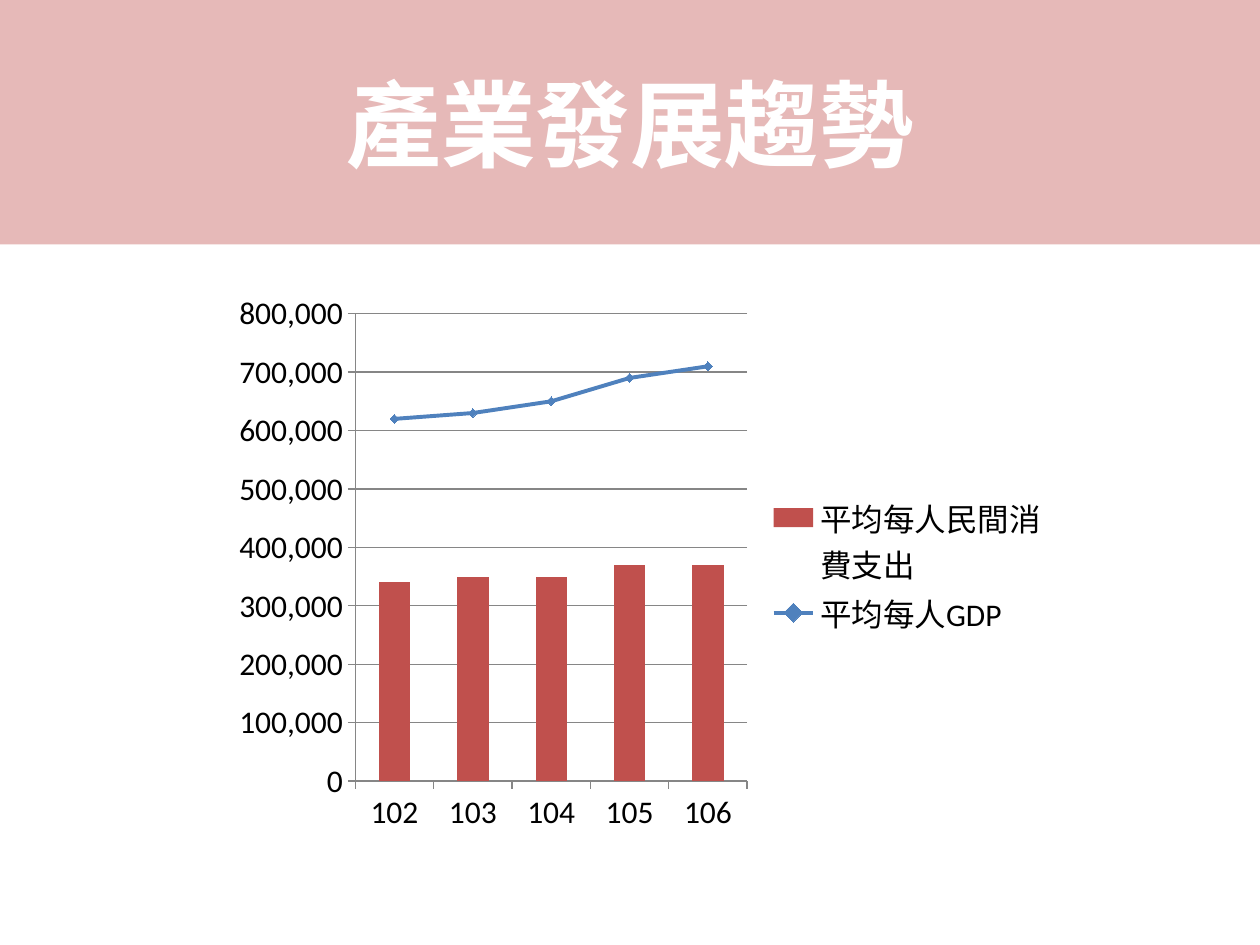
from dataclasses import dataclass

from lxml import etree
from pptx import Presentation
from pptx.chart.data import CategoryChartData
from pptx.dml.color import RGBColor
from pptx.enum.chart import (XL_CHART_TYPE, XL_LEGEND_POSITION, XL_MARKER_STYLE,
                             XL_TICK_MARK)
from pptx.enum.text import MSO_ANCHOR, PP_ALIGN
from pptx.oxml import parse_xml
from pptx.oxml.ns import nsdecls, qn
from pptx.util import Inches, Pt

COLUMN = XL_CHART_TYPE.COLUMN_CLUSTERED
RIGHT = XL_LEGEND_POSITION.RIGHT
DIAMOND = XL_MARKER_STYLE.DIAMOND
OUT, NONE = XL_TICK_MARK.OUTSIDE, XL_TICK_MARK.NONE
MIDDLE, CENTER = MSO_ANCHOR.MIDDLE, PP_ALIGN.CENTER


@dataclass(frozen=True)
class Theme:
    band: RGBColor = RGBColor.from_string("E6B9B8")
    white: RGBColor = RGBColor.from_string("FFFFFF")
    black: RGBColor = RGBColor.from_string("000000")
    grid: RGBColor = RGBColor.from_string("868686")
    bar: RGBColor = RGBColor.from_string("C0504D")
    line: RGBColor = RGBColor.from_string("4F81BD")
    head: str = "Noto Sans CJK SC"
    body: str = "Calibri"
    big: Pt = Pt(54)
    small: Pt = Pt(18)


THEME = Theme()

YEARS = ["102", "103", "104", "105", "106"]
SPEND = [340000, 350000, 350000, 370000, 370000]
INCOME = [620000, 630000, 650000, 690000, 710000]


def add_title(slide, text, left, top, width, height):
    title = slide.shapes.title
    title.left, title.top = Inches(left), Inches(top)
    title.width, title.height = Inches(width), Inches(height)
    title.fill.solid()
    title.fill.fore_color.rgb = THEME.band
    frame = title.text_frame
    frame.text = text
    frame.vertical_anchor = MIDDLE
    para = frame.paragraphs[0]
    para.alignment = CENTER
    font = para.font
    font.size, font.bold, font.name = THEME.big, True, THEME.head
    font.color.rgb = THEME.white
    props = para._p.pPr.find(qn("a:defRPr"))
    etree.SubElement(props, qn("a:ea"), typeface=THEME.head)


def move_to_line(chart):
    bars = chart._chartSpace.find(".//" + qn("c:barChart"))
    last = bars.findall(qn("c:ser"))[-1]
    invert = last.find(qn("c:invertIfNegative"))
    if invert is not None:
        last.remove(invert)
    group = parse_xml(
        f'<c:lineChart {nsdecls("c")}><c:grouping val="standard"/>'
        '<c:varyColors val="0"/><c:marker val="1"/></c:lineChart>')
    group.insert(2, last)
    for axis in bars.findall(qn("c:axId")):
        etree.SubElement(group, qn("c:axId"), val=axis.get("val"))
    bars.addnext(group)


def set_layout(part, place, box, size, inner=False):
    old = part.find(qn("c:layout"))
    if old is not None:
        part.remove(old)
    layout = etree.Element(qn("c:layout"))
    manual = etree.SubElement(layout, qn("c:manualLayout"))
    left, top, width, height = box
    wide, high = size
    items = [("layoutTarget", "inner")] if inner else []
    items += [("xMode", "edge"), ("yMode", "edge"),
              ("x", left / wide), ("y", top / high),
              ("w", width / wide), ("h", height / high)]
    for tag, val in items:
        etree.SubElement(manual, qn("c:" + tag), val=str(val))
    part.insert(place, layout)


def style_axes(chart):
    for axis in (chart.category_axis, chart.value_axis):
        axis.major_tick_mark, axis.minor_tick_mark = OUT, NONE
        axis.format.line.color.rgb = THEME.grid
    chart.category_axis.has_major_gridlines = False
    value = chart.value_axis
    value.minimum_scale, value.maximum_scale = 0, 800000
    value.major_unit = 100000
    value.has_major_gridlines = True
    value.major_gridlines.format.line.color.rgb = THEME.grid
    value.tick_labels.number_format = "#,##0"
    value.tick_labels.number_format_is_linked = False


def add_trend(slide, left, top, width, height):
    data = CategoryChartData(number_format="#,##0")
    data.categories = YEARS
    data.add_series("平均每人民間消費支出", SPEND)
    data.add_series("平均每人GDP", INCOME)
    chart = slide.shapes.add_chart(
        COLUMN, Inches(left), Inches(top), Inches(width), Inches(height), data).chart
    chart.has_title = False
    chart.font.name, chart.font.size = THEME.body, THEME.small
    chart.font.color.rgb = THEME.black
    chart.has_legend = True
    chart.legend.position = RIGHT
    chart.legend.include_in_layout = False
    style_axes(chart)
    move_to_line(chart)
    size = width, height
    area = chart._chartSpace.find(".//" + qn("c:plotArea"))
    set_layout(area, 0, (1.05, 0.24, 3.11, 3.71), size, inner=True)
    key = chart._chartSpace.find(".//" + qn("c:legend"))
    set_layout(key, 1, (4.33, 1.65, 2.2, 1.17), size)

    bars, lines = chart.plots
    bars.gap_width = 150
    bars.vary_by_categories = False
    fill = bars.series[0].format.fill
    fill.solid()
    fill.fore_color.rgb = THEME.bar
    curve = lines.series[0]
    curve.smooth = False
    curve.format.line.color.rgb = THEME.line
    curve.format.line.width = Pt(2.25)
    mark = curve.marker
    mark.style, mark.size = DIAMOND, 5
    mark.format.fill.solid()
    mark.format.fill.fore_color.rgb = THEME.line
    mark.format.line.color.rgb = THEME.line


def main():
    deck = Presentation()
    deck.slide_width, deck.slide_height = Inches(10), Inches(7.5)
    slide = deck.slides.add_slide(deck.slide_layouts.get_by_name("Title Only"))
    add_title(slide, "產業發展趨勢", 0, 0, 10, 1.94)
    add_trend(slide, 1.77, 2.25, 6.67, 4.44)
    deck.save("out.pptx")


if __name__ == "__main__":
    main()
